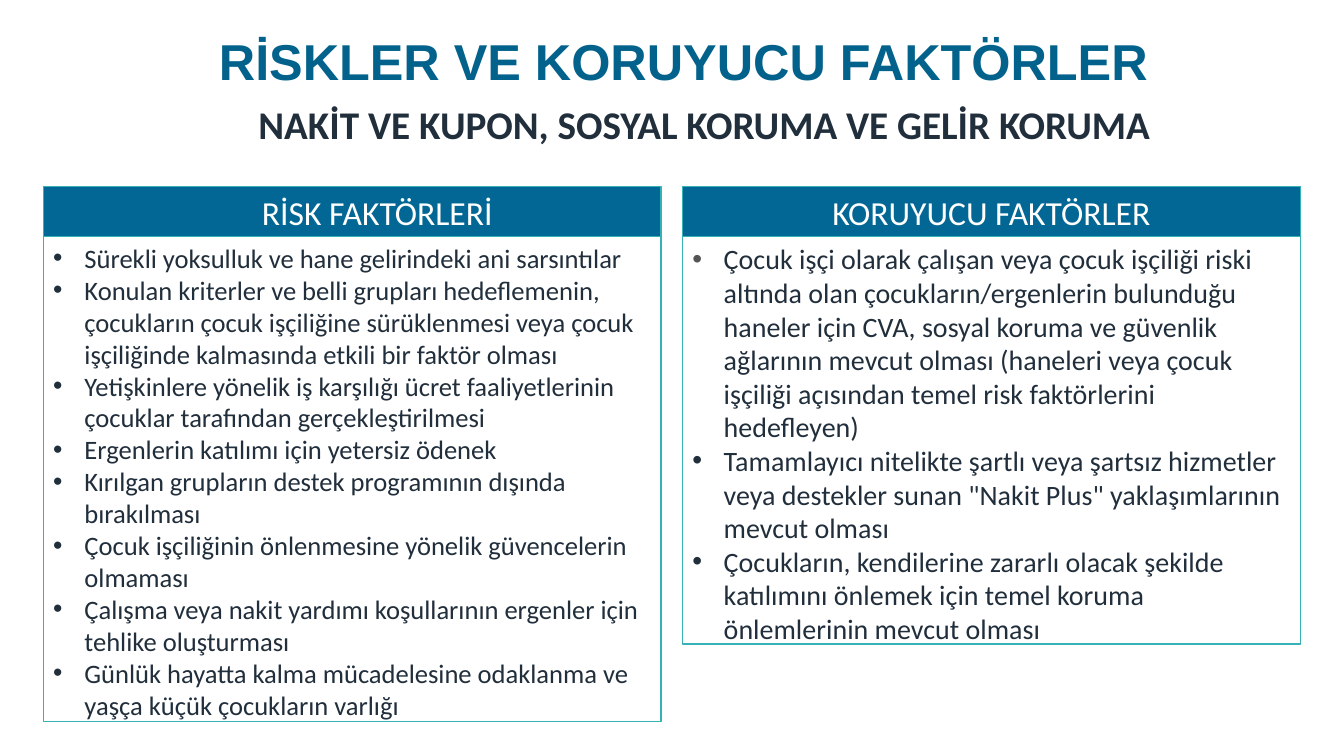
from lxml.etree import SubElement
from pptx import Presentation
from pptx.dml.color import RGBColor
from pptx.enum.shapes import MSO_SHAPE
from pptx.enum.text import MSO_ANCHOR, PP_ALIGN
from pptx.oxml.ns import qn
from pptx.util import Cm, Pt

NAVY, BLUE, TEAL, WHITE, GREY = "212E3B", "026794", "35B2B4", "FFFFFF", "545554"

HEADINGS = [
    {"text": "RİSKLER VE KORUYUCU FAKTÖRLER", "place": (5.18, 0.33, 24.1, 2.57),
     "color": "02628C", "indent": 0, "anchor": MSO_ANCHOR.MIDDLE, "spacing": 0.9,
     "font": {"name": "Arial", "size": Pt(36), "bold": True}},
    {"text": "NAKİT VE KUPON, SOSYAL KORUMA VE GELİR KORUMA", "place": (4.5, 2.41, 25.22, 2.64),
     "color": NAVY, "indent": 1.27, "anchor": MSO_ANCHOR.TOP, "spacing": 1.0,
     "font": {"name": "Calibri", "size": Pt(28), "bold": True}},
]

COLUMNS = [
    {"header": "RİSK FAKTÖRLERİ", "indent": 1.27, "height": 12.22, "size": 19,
     "first_bullet": NAVY,
     "items": [
         "Sürekli yoksulluk ve hane gelirindeki ani sarsıntılar",
         "Konulan kriterler ve belli grupları hedeflemenin, çocukların çocuk işçiliğine "
         "sürüklenmesi veya çocuk işçiliğinde kalmasında etkili bir faktör olması",
         "Yetişkinlere yönelik iş karşılığı ücret faaliyetlerinin çocuklar tarafından "
         "gerçekleştirilmesi",
         "Ergenlerin katılımı için yetersiz ödenek",
         "Kırılgan grupların destek programının dışında bırakılması",
         "Çocuk işçiliğinin önlenmesine yönelik güvencelerin olmaması",
         "Çalışma veya nakit yardımı koşullarının ergenler için tehlike oluşturması",
         "Günlük hayatta kalma mücadelesine odaklanma ve yaşça küçük çocukların varlığı",
     ]},
    {"header": "KORUYUCU FAKTÖRLER", "indent": 0, "height": 10.26, "size": 20,
     "first_bullet": GREY,
     "items": [
         "Çocuk işçi olarak çalışan veya çocuk işçiliği riski altında olan "
         "çocukların/ergenlerin bulunduğu haneler için CVA, sosyal koruma ve güvenlik "
         "ağlarının mevcut olması (haneleri veya çocuk işçiliği açısından temel risk "
         "faktörlerini hedefleyen)",
         "Tamamlayıcı nitelikte şartlı veya şartsız hizmetler veya destekler sunan "
         "\"Nakit Plus\" yaklaşımlarının mevcut olması",
         "Çocukların, kendilerine zararlı olacak şekilde katılımını önlemek için temel "
         "koruma önlemlerinin mevcut olması",
     ]},
]

LEFT, TOP, WIDTH, GAP, HEADER_HEIGHT, HANGING = 1.09, 4.7, 15.57, 0.54, 1.27, 0.79


def paint(target, color):
    target.rgb = RGBColor.from_string(color)


def set_values(target, values):
    for name, value in values.items():
        setattr(target, name, value)


def write(para, text, color, font, layout):
    span = para.add_run()
    span.text = text
    set_values(span.font, font)
    paint(span.font.color, color)
    set_values(para, layout)


def indent(para, left, first=0):
    properties = para._p.get_or_add_pPr()
    properties.set("marL", str(Cm(left)))
    properties.set("indent", str(Cm(first)))
    return properties


def add_bullet(para, color):
    properties = indent(para, HANGING, -HANGING)
    tint = SubElement(properties, qn("a:buClr"))
    SubElement(tint, qn("a:srgbClr")).set("val", color)
    SubElement(properties, qn("a:buFont")).set("typeface", "Arial")
    SubElement(properties, qn("a:buChar")).set("char", "•")


def add_panel(page, place, fill=None):
    panel = page.shapes.add_shape(MSO_SHAPE.RECTANGLE, *map(Cm, place))
    panel.shadow.inherit = False
    if fill:
        panel.fill.solid()
        paint(panel.fill.fore_color, fill)
    else:
        panel.fill.background()
    paint(panel.line.color, TEAL)
    panel.line.width = Pt(0.75)
    set_values(panel.text_frame, {"word_wrap": True, "vertical_anchor": MSO_ANCHOR.TOP})
    return panel.text_frame


def add_heading(page, heading):
    frame = page.shapes.add_textbox(*map(Cm, heading["place"])).text_frame
    set_values(frame, {"word_wrap": True, "vertical_anchor": heading["anchor"]})
    para = frame.paragraphs[0]
    write(para, heading["text"], heading["color"], heading["font"],
          {"alignment": PP_ALIGN.CENTER, "line_spacing": heading["spacing"]})
    indent(para, heading["indent"])


def add_column(page, column, left):
    body = add_panel(page, (left, TOP + HEADER_HEIGHT, WIDTH, column["height"]))
    for number, item in enumerate(column["items"]):
        para = body.add_paragraph() if number else body.paragraphs[0]
        write(para, item, NAVY, {"name": "Calibri", "size": Pt(column["size"])},
              {"alignment": PP_ALIGN.LEFT})
        add_bullet(para, NAVY if number else column["first_bullet"])
    header = add_panel(page, (left, TOP, WIDTH, HEADER_HEIGHT), BLUE).paragraphs[0]
    write(header, column["header"], WHITE, {"name": "Calibri", "size": Pt(24)},
          {"alignment": PP_ALIGN.CENTER})
    indent(header, column["indent"])


def main():
    deck = Presentation()
    set_values(deck, {"slide_width": Cm(33.87), "slide_height": Cm(19.05)})
    page = deck.slides.add_slide(deck.slide_layouts[6])
    for heading in HEADINGS:
        add_heading(page, heading)
    for number, column in enumerate(COLUMNS):
        add_column(page, column, LEFT + number * (WIDTH + GAP))
    deck.save("out.pptx")


if __name__ == "__main__":
    main()
